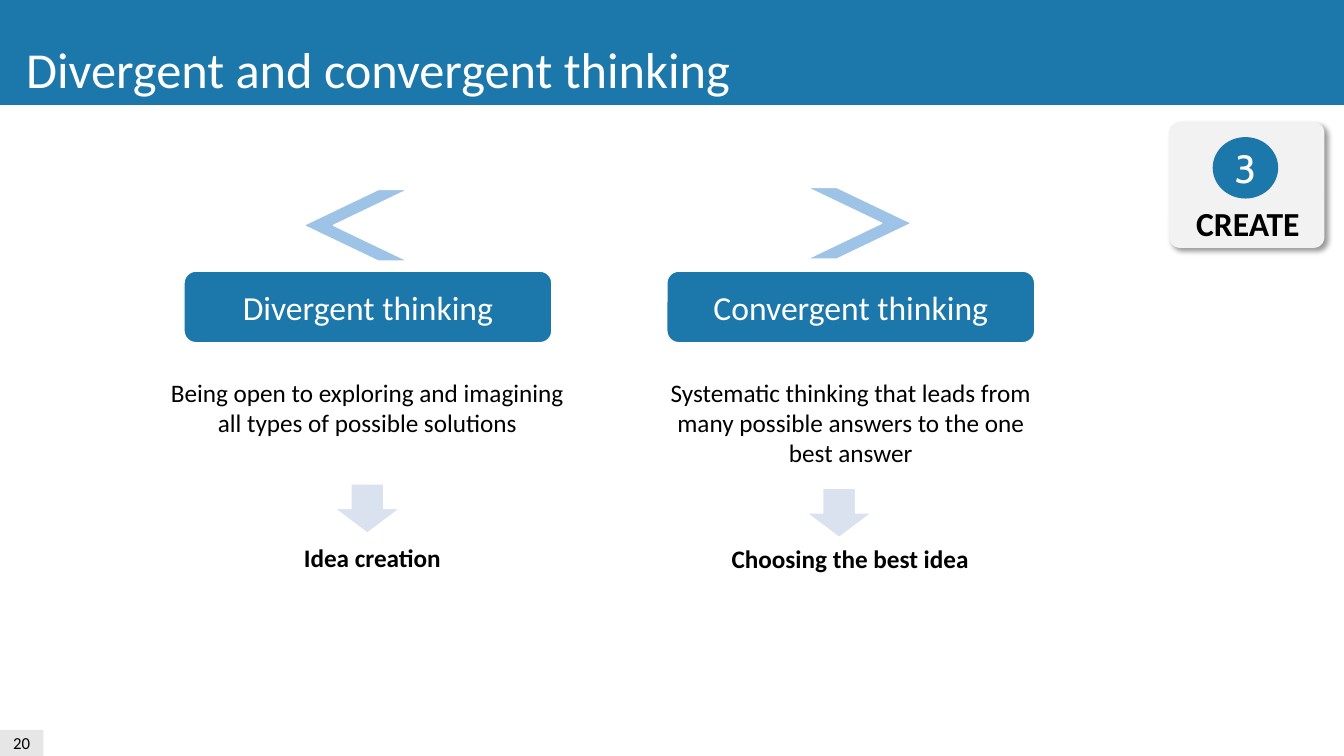
from lxml import etree
from pptx import Presentation
from pptx.dml.color import RGBColor
from pptx.enum.shapes import MSO_SHAPE
from pptx.enum.text import MSO_ANCHOR, MSO_AUTO_SIZE, PP_ALIGN
from pptx.oxml.ns import qn
from pptx.util import Pt

RECT, ROUND, OVAL = MSO_SHAPE.RECTANGLE, MSO_SHAPE.ROUNDED_RECTANGLE, MSO_SHAPE.OVAL
ARROW, CHEVRON = MSO_SHAPE.DOWN_ARROW, MSO_SHAPE.CHEVRON
LEFT, CENTER = PP_ALIGN.LEFT, PP_ALIGN.CENTER
TOP, MIDDLE = MSO_ANCHOR.TOP, MSO_ANCHOR.MIDDLE
FIXED = MSO_AUTO_SIZE.NONE

BLUE, SKY, PALE = "1C78AB", "9DC3E6", "DAE2F0"
GREY, LIGHT, WHITE, BLACK = "E7E6E6", "F2F2F2", "FFFFFF", "000000"


def color(code):
    return RGBColor.from_string(code)


class Board:
    font = "Calibri"

    def __init__(self, slide):
        self.slide = slide

    def letter(self, shape, text, size, ink=BLACK, bold=False, align=CENTER,
               anchor=MIDDLE, wrap=True, font=None):
        """Put formatted text into a shape."""
        frame = shape.text_frame
        frame.text = text
        frame.word_wrap = wrap
        frame.auto_size = FIXED
        frame.vertical_anchor = anchor
        for para in frame.paragraphs:
            para.alignment = align
            for run in para.runs:
                run.font.name = font or self.font
                run.font.size = Pt(size)
                run.font.bold = bold
                run.font.color.rgb = color(ink)

    def title(self, text, x, y, w, h):
        head = self.slide.shapes.title
        head.left, head.top, head.width, head.height = Pt(x), Pt(y), Pt(w), Pt(h)
        self.letter(head, text, 36, WHITE, align=LEFT, anchor=TOP, wrap=False)
        # Bring the title in front of the band drawn so far.
        head.element.getparent().append(head.element)

    def shape(self, kind, x, y, w, h, fill, edge=None, adj=None):
        item = self.slide.shapes.add_shape(kind, Pt(x), Pt(y), Pt(w), Pt(h))
        item.shadow.inherit = False
        item.fill.solid()
        item.fill.fore_color.rgb = color(fill)
        if edge:
            item.line.color.rgb = color(edge)
            item.line.width = Pt(1)
        else:
            item.line.fill.background()
        if adj is not None:
            item.adjustments[0] = adj
        return item

    def label(self, text, x, y, w, h, size, **style):
        box = self.slide.shapes.add_textbox(Pt(x), Pt(y), Pt(w), Pt(h))
        self.letter(box, text, size, anchor=TOP, **style)

    def shade(self, item):
        """Give the shape a soft shadow to the lower right."""
        effects = item.element.spPr.find(qn("a:effectLst"))
        outer = etree.SubElement(
            effects, qn("a:outerShdw"), blurRad=str(Pt(4)), dist=str(Pt(3)),
            dir="2700000", algn="tl", rotWithShape="0")
        tint = etree.SubElement(outer, qn("a:srgbClr"), val=BLACK)
        etree.SubElement(tint, qn("a:alpha"), val="40000")

    def badge(self, number, text):
        self.shade(self.shape(ROUND, 835.2, 87.1, 110.9, 90, LIGHT, adj=0.087))
        disc = self.shape(OVAL, 866.2, 97.9, 46.8, 43.9, BLUE)
        self.letter(disc, number, 28, WHITE, font="Cabin", wrap=False)
        self.label(text, 846.7, 141.1, 89.3, 36, 24, bold=True, wrap=False)

    def column(self, name, x, note, sign, arrow, result):
        """Draw one way of thinking from its sign down to its result."""
        left, top, turn = sign
        mark = self.shape(CHEVRON, left, top, 74.9, 51.1, SKY, WHITE, 1.045)
        mark.rotation = turn
        head = self.shape(ROUND, x, 193.7, 262.8, 51.1, BLUE, WHITE)
        self.letter(head, name, 24, WHITE)
        text, left, wide = note
        self.label(text, left, 265.7, wide, 72, 18)
        self.shape(ARROW, *arrow, 46.8, 35.3, PALE, WHITE)
        text, left, top, wide = result
        self.label(text, left, top, wide, 28.8, 18, bold=True, wrap=False)


def main():
    deck = Presentation()
    deck.slide_width, deck.slide_height = Pt(960), Pt(540)
    board = Board(deck.slides.add_slide(deck.slide_layouts[5]))

    board.shape(RECT, 0, -0.7, 960, 75.6, BLUE)
    board.title("Divergent and convergent thinking", 11.5, 23.8, 522, 51.1)
    page = board.shape(RECT, 0, 521.3, 31, 18.7, GREY)
    board.letter(page, "20", 12, wrap=False)
    board.badge("3", "CREATE")

    board.column(
        "Divergent thinking", 131.4,
        ("Being open to exploring and imagining all types of possible solutions",
         109.4, 306),
        (216.7, 135.4, 180), (239, 345.6),
        ("Idea creation", 209.5, 383.8, 113))
    board.column(
        "Convergent thinking", 476.3,
        ("Systematic thinking that leads from many possible answers to the one "
         "best answer", 460.8, 293.8),
        (576.4, 133.9, 0), (576, 348.7),
        ("Choosing the best idea", 514.8, 384.5, 185))
    deck.save("out.pptx")


if __name__ == "__main__":
    main()
